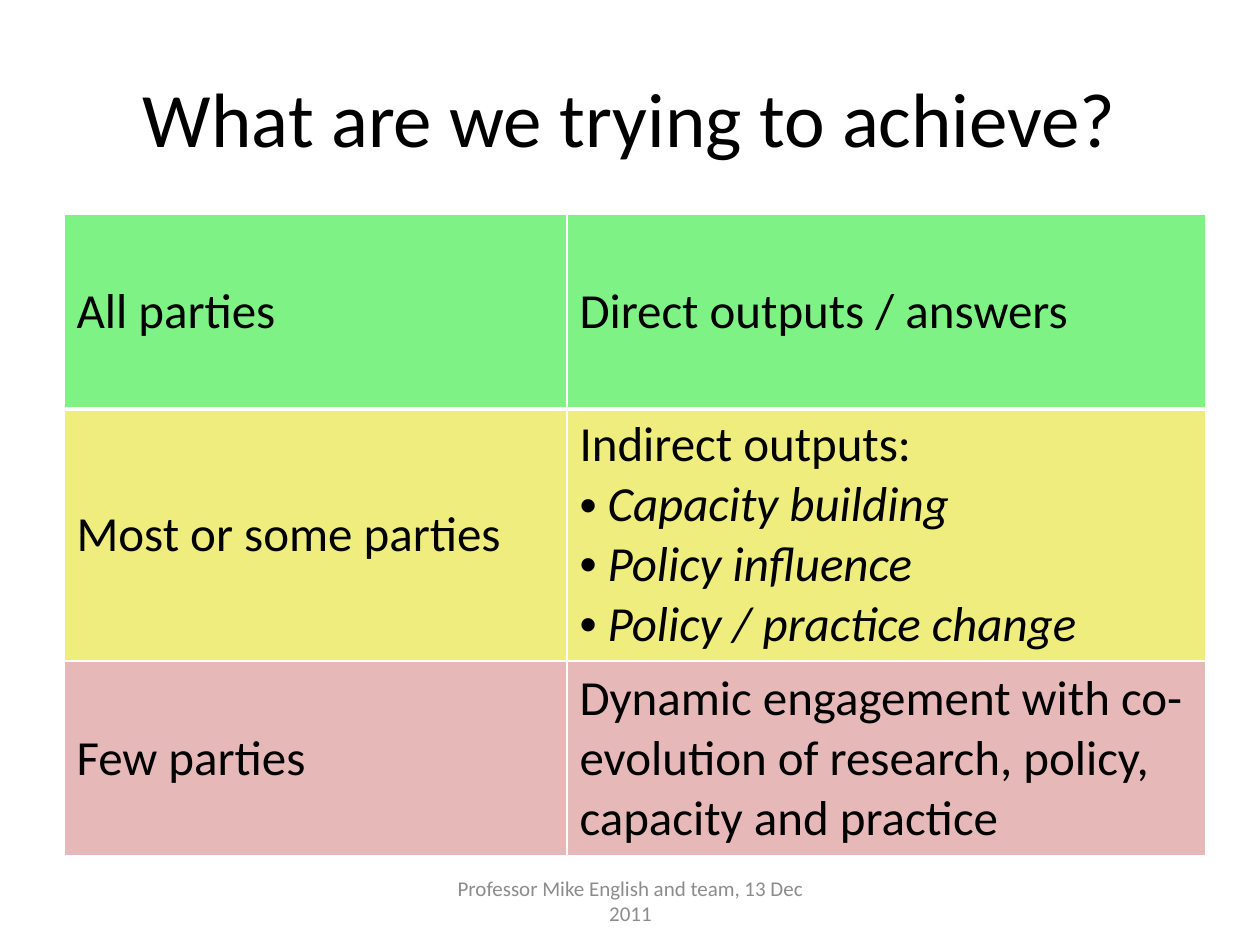
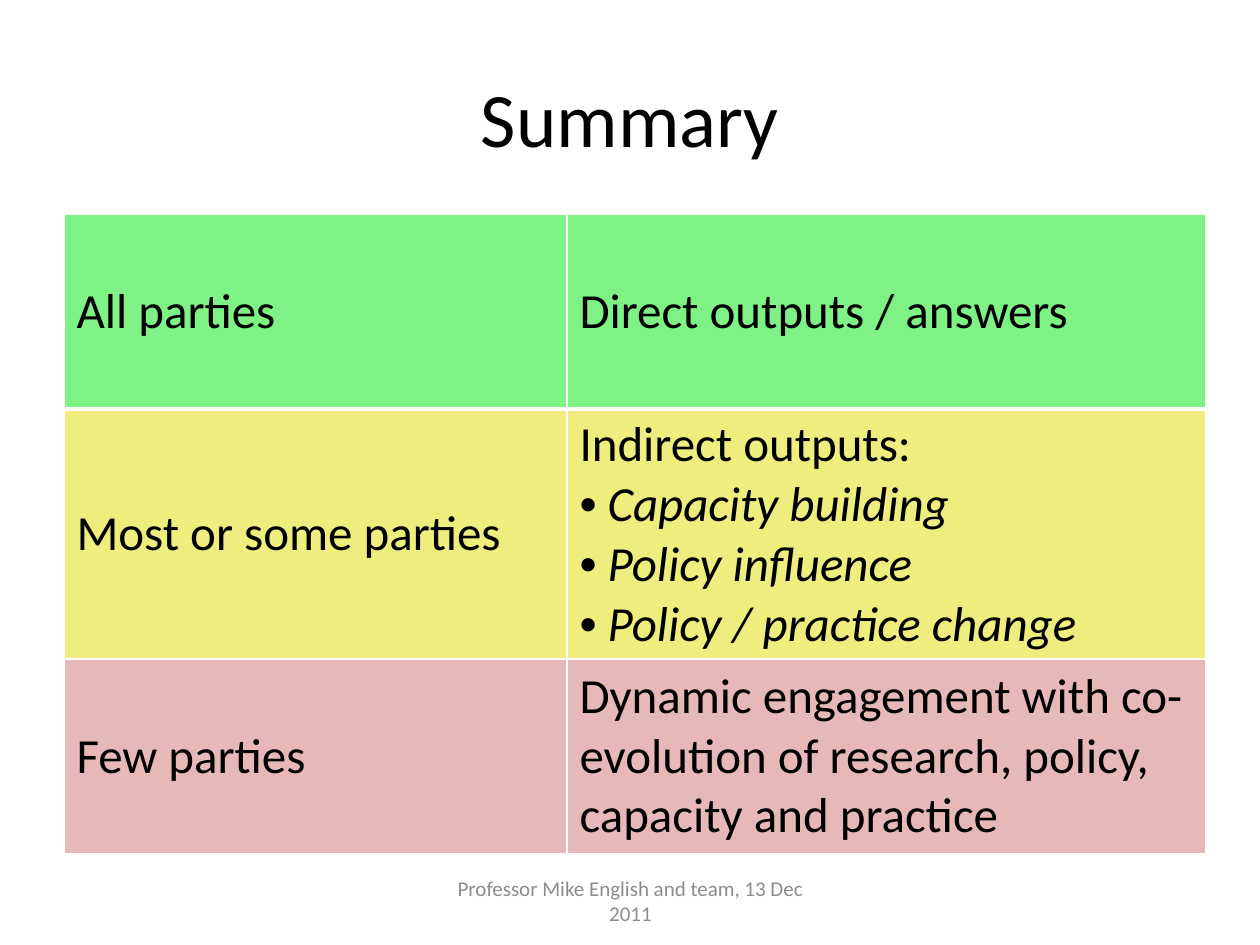
from dataclasses import dataclass

from lxml.etree import SubElement
from pptx import Presentation
from pptx.dml.color import RGBColor as Color
from pptx.enum.text import MSO_ANCHOR as Anchor, PP_ALIGN as Align
from pptx.oxml.ns import qn
from pptx.util import Pt

PX = 914400 / 126


@dataclass(frozen=True)
class Theme:
    font: str = "Calibri"
    ink: str = "000000"
    muted: str = "8C8C8C"
    rule: str = "FFFFFF"
    green: str = "7EF284"
    yellow: str = "F0ED7F"
    pink: str = "E6B9B8"
    title: int = 44
    body: int = 28
    footer: int = 12


theme = Theme()


def px(*lengths):
    return [round(length * PX) for length in lengths]


def write(para, text, size, color, align=Align.LEFT, italic=False):
    para.alignment = align
    span = para.add_run()
    span.text = text
    formats = {"name": theme.font, "size": Pt(size), "italic": italic, "bold": False}
    for name, value in formats.items():
        setattr(span.font, name, value)
    span.font.color.rgb = Color.from_string(color)


# Content shared by both slides
titles = ["What are we trying to achieve?", "Summary"]
footer = "Professor Mike English and team, 13 Dec 2011"
footer_area = (431, 876, 399, 50)
title_area = (63, 38, 1134, 158)
table_area = (64, 214, 1142, 640)
column_widths = px(503, 639)
row_heights = px(195, 250, 195)
bullet_indent, = px(28)

# Each row: fill, party group, outcome, bulleted details
rows = [
    (theme.green, "All parties", "Direct outputs / answers", []),
    (theme.yellow, "Most or some parties", "Indirect outputs:",
     ["Capacity building", "Policy influence", "Policy / practice change"]),
    (theme.pink, "Few parties",
     "Dynamic engagement with co-evolution of research, policy, capacity and practice", []),
]

deck = Presentation()
deck.slide_width, deck.slide_height = px(1260, 945)

for title in titles:
    page = deck.slides.add_slide(deck.slide_layouts[6])

    # Title
    texts = [
        (title_area, title, theme.title, theme.ink),
        (footer_area, footer, theme.footer, theme.muted),
    ]

    # Outcome table
    table = page.shapes.add_table(len(rows), 2, *px(*table_area)).table
    table.first_row = table.horz_banding = False
    for column, width in zip(table.columns, column_widths):
        column.width = width
    for row, height in zip(table.rows, row_heights):
        row.height = height

    for row_index, (fill, party, outcome, details) in enumerate(rows):
        for column_index, text in enumerate([party, outcome]):
            cell = table.cell(row_index, column_index)
            cell.vertical_anchor = Anchor.MIDDLE
            write(cell.text_frame.paragraphs[0], text, theme.body, theme.ink)

            # Cell borders, heavier below the first row
            edges = {"L": 1, "R": 1, "T": 3 if row_index == 1 else 1,
                     "B": 3 if row_index == 0 else 1}
            properties = cell._tc.get_or_add_tcPr()
            for edge, weight in edges.items():
                line = SubElement(properties, qn(f"a:ln{edge}"), w=str(Pt(weight)))
                SubElement(SubElement(line, qn("a:solidFill")), qn("a:srgbClr"), val=theme.rule)
            cell.fill.solid()
            cell.fill.fore_color.rgb = Color.from_string(fill)

        # Bulleted details under the outcome
        for detail in details:
            para = cell.text_frame.add_paragraph()
            write(para, detail, theme.body, theme.ink, italic=True)
            properties = para._p.get_or_add_pPr()
            properties.set("marL", str(bullet_indent))
            properties.set("indent", str(-bullet_indent))
            SubElement(properties, qn("a:buFont"), typeface="Arial")
            SubElement(properties, qn("a:buChar"), char="•")

    # Title and footer boxes
    for area, text, size, color in texts:
        box = page.shapes.add_textbox(*px(*area))
        box.text_frame.word_wrap = True
        box.text_frame.vertical_anchor = Anchor.MIDDLE
        write(box.text_frame.paragraphs[0], text, size, color, Align.CENTER)

deck.save("out.pptx")
